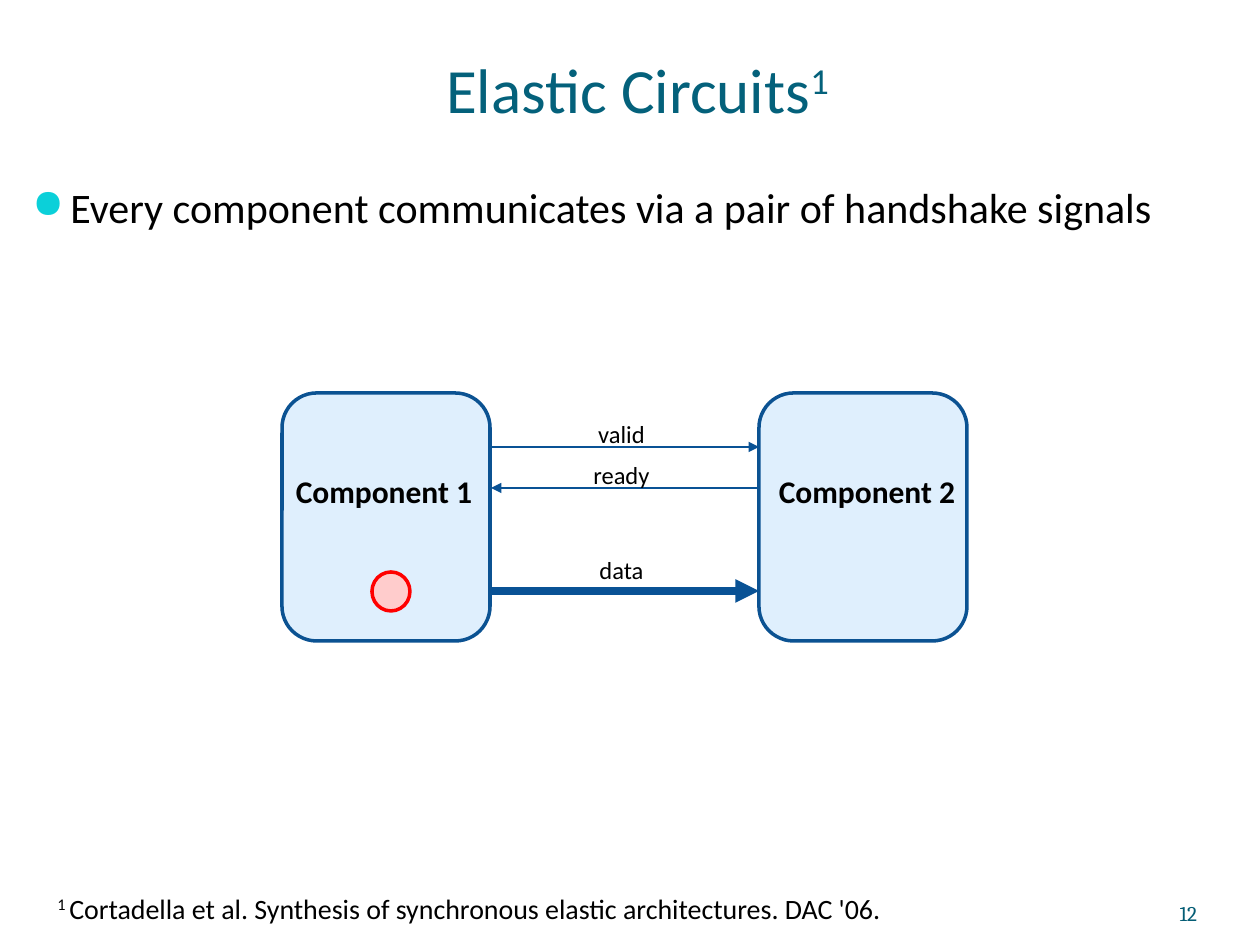
from pptx import Presentation, util as u
from pptx.dml.color import RGBColor
from pptx.enum import shapes, text
from pptx.oxml import ns, xmlchemy as xc

SCALE = 914400 / 126
TEAL = RGBColor(0x04, 0x61, 0x7B)
DEEP = RGBColor(0x04, 0x5D, 0x75)
CYAN = RGBColor(0x0B, 0xD0, 0xD9)
BLACK = RGBColor(0, 0, 0)
PALE = RGBColor(0xDF, 0xEF, 0xFD)
BLUE = RGBColor(0x0B, 0x52, 0x92)
WIRE = RGBColor(0x09, 0x52, 0x95)
PINK = RGBColor(0xFF, 0xCC, 0xCC)
RED = RGBColor(0xFF, 0, 0)
LEFT, MID, RIGHT = text.PP_ALIGN.LEFT, text.PP_ALIGN.CENTER, text.PP_ALIGN.RIGHT
LOW = text.MSO_ANCHOR.BOTTOM
ROUND, OVAL = shapes.MSO_SHAPE.ROUNDED_RECTANGLE, shapes.MSO_SHAPE.OVAL


def emu(*px):
    return [u.Emu(round(n * SCALE)) for n in px]


def node(parent, tag, **attrs):
    child = xc.OxmlElement(tag)
    for key, val in attrs.items():
        child.set(key, str(val))
    parent.append(child)
    return child


class Deck:
    """Draws styled elements on the current slide."""

    def __init__(self, wide, high):
        self.file = Presentation()
        self.file.slide_width, self.file.slide_height = emu(wide, high)
        self.slide = self.file.slides.add_slide(self.file.slide_layouts[6])
        self.font = {"name": "Calibri", "bold": False}

    def label(self, box, runs, size, color=BLACK, align=MID, frame=None, gap=0, **font):
        shape = self.slide.shapes.add_textbox(*emu(*box))
        body = shape.text_frame
        for key, val in {"word_wrap": True, **(frame or {})}.items():
            setattr(body, key, val)
        para = body.paragraphs[0]
        para.alignment, para.space_before = align, u.Pt(gap)
        for words, raised in runs:
            run = para.add_run()
            run.text = words
            for key, val in {**self.font, "size": u.Pt(size), **font}.items():
                setattr(run.font, key, val)
            run.font.color.rgb = color
            if raised:
                run.font._element.set("baseline", "30000")
        return para

    def bullet(self, box, words, size, color, indent):
        para = self.label(box, [(words, False)], size, align=LEFT, gap=size / 5)
        props = para._p.get_or_add_pPr()
        step = emu(indent)[0]
        props.set("marL", str(step))
        props.set("indent", str(-step))
        node(node(props, "a:buClr"), "a:srgbClr", val=color)
        node(props, "a:buSzPct", val=95000)
        node(props, "a:buChar", char="●")

    def block(self, kind, box, fill, line):
        shape = self.slide.shapes.add_shape(kind, *emu(*box))
        shape.shadow.inherit = False
        shape.fill.solid()
        shape.fill.fore_color.rgb = fill
        shape.line.color.rgb = line
        shape.line.width = u.Pt(2)

    def arrow(self, start, end, y, width):
        wire = self.slide.shapes.add_connector(
            shapes.MSO_CONNECTOR.STRAIGHT, *emu(start, y, end, y))
        wire.line.color.rgb = WIRE
        wire.line.width = u.Pt(width)
        node(wire.line._get_or_add_ln(), "a:tailEnd", type="triangle")
        wire._element.find(ns.qn("p:spPr")).append(xc.OxmlElement("a:effectLst"))


def main():
    deck = Deck(1260, 945)
    flush = {"vertical_anchor": LOW, "margin_left": 0, "margin_right": 0, "margin_bottom": 0}
    deck.label((20, -32, 1235, 158), [("Elastic Circuits", False), ("1", True)], 36, TEAL, frame=flush)
    deck.bullet((20, 175, 1216, 129), "Every component communicates via a pair of handshake signals", 24, CYAN, 38)

    for x, left, wide, name in ((282, 282, 204, "Component 1"), (759, 756, 222, "Component 2")):
        deck.block(ROUND, (x, 393, 208, 248), PALE, BLUE)
        deck.label((left, 466, wide, 50), [(name, False)], 18, bold=True)

    west, east = 491, 759
    for name, top, y, start, end, width in (
        ("valid", 413, 447, west, east, 0.75),
        ("ready", 454, 488, east, west, 0.75),
        ("data", 549, 591, west, east, 4.5),
    ):
        deck.arrow(start, end, y, width)
        deck.label((522, top, 199, 43), [(name, False)], 14)
    deck.block(OVAL, (372, 572, 38, 39), PINK, RED)

    note = "Cortadella et al. Synthesis of synchronous elastic architectures. DAC '06."
    deck.label((45, 885, 1150, 56), [("1 ", True), (note, False)], 16, align=LEFT, gap=3.2)
    deck.label((1092, 876, 105, 50), [("12", False)], 12, DEEP, RIGHT, {**flush, "margin_top": 0}, name="Cambria")
    deck.file.save("out.pptx")


if __name__ == "__main__":
    main()
